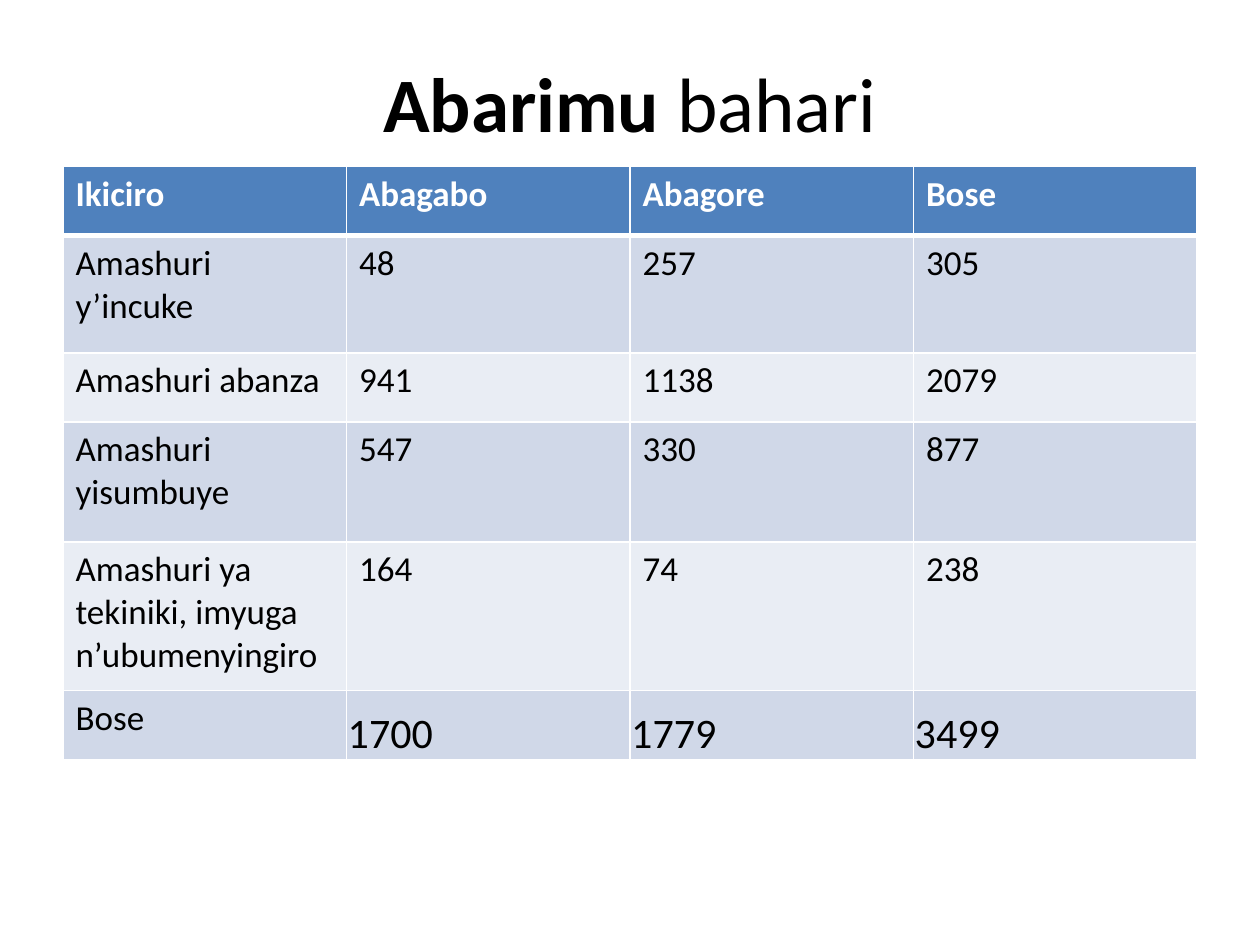
from lxml import etree
from pptx import Presentation
from pptx.dml.color import RGBColor
from pptx.enum.text import MSO_ANCHOR, PP_ALIGN
from pptx.oxml.ns import qn
from pptx.util import Inches, Pt

MIDDLE = MSO_ANCHOR.MIDDLE
BOTTOM = MSO_ANCHOR.BOTTOM
CENTER = PP_ALIGN.CENTER

FONT = "Calibri"
BLACK = "000000"
WHITE = "FFFFFF"
HEADER_FILL = "4F81BD"
BAND_FILLS = ["E9EDF4", "D0D8E8"]

COLUMN_WIDTH = 2.25
ROW_HEIGHTS = [0.55, 0.93, 0.55, 0.95, 1.18, 0.55]
TEACHERS = [
    ["Ikiciro", "Abagabo", "Abagore", "Bose"],
    ["Amashuri y’incuke", "48", "257", "305"],
    ["Amashuri abanza", "941", "1138", "2079"],
    ["Amashuri yisumbuye", "547", "330", "877"],
    ["Amashuri ya tekiniki, imyuga n’ubumenyingiro", "164", "74", "238"],
    ["Bose", "1700", "1779", "3499"],
]


def color(value):
    return RGBColor.from_string(value)


def style_font(font, size, value):
    font.name = FONT
    font.size = Pt(size)
    font.color.rgb = color(value)


def add_title(slide):
    shape = slide.shapes.add_textbox(Inches(0.5), Inches(0.3), Inches(9), Inches(1.02))
    frame = shape.text_frame
    frame.word_wrap = True
    frame.vertical_anchor = MIDDLE
    paragraph = frame.paragraphs[0]
    paragraph.alignment = CENTER
    style_font(paragraph.font, 44, BLACK)
    for text, bold in [("Abarimu ", True), ("bahari", False)]:
        run = paragraph.add_run()
        run.text = text
        run.font.bold = bold


def set_borders(cell, top, bottom):
    properties = cell._tc.get_or_add_tcPr()
    for side, width in [("L", 1), ("R", 1), ("T", top), ("B", bottom)]:
        line = etree.SubElement(properties, qn(f"a:ln{side}"), w=str(Pt(width)))
        fill = etree.SubElement(line, qn("a:solidFill"))
        etree.SubElement(fill, qn("a:srgbClr"), val=WHITE)


def fill_cell(cell, text, row, is_total):
    is_header = row == 0
    set_borders(cell, 3 if row == 1 else 1, 3 if is_header else 1)
    cell.fill.solid()
    cell.fill.fore_color.rgb = color(HEADER_FILL if is_header else BAND_FILLS[row % 2])
    cell.text = text
    font = cell.text_frame.paragraphs[0].font
    style_font(font, 24 if is_total else 20, WHITE if is_header else BLACK)
    font.bold = is_header
    if is_total:
        cell.vertical_anchor = BOTTOM
        cell.margin_left = cell.margin_right = cell.margin_top = Inches(0.01)
        cell.margin_bottom = 0


def add_teacher_table(slide):
    row_count, column_count = len(TEACHERS), len(TEACHERS[0])
    table = slide.shapes.add_table(
        row_count, column_count, Inches(0.5), Inches(1.32),
        Inches(COLUMN_WIDTH * column_count), Inches(sum(ROW_HEIGHTS)),
    ).table
    for column in table.columns:
        column.width = Inches(COLUMN_WIDTH)
    for row, values in enumerate(TEACHERS):
        table.rows[row].height = Inches(ROW_HEIGHTS[row])
        for column, text in enumerate(values):
            is_total = row == row_count - 1 and column > 0
            fill_cell(table.cell(row, column), text, row, is_total)


def main():
    presentation = Presentation()
    presentation.slide_width = Inches(10)
    presentation.slide_height = Inches(7.5)
    slide = presentation.slides.add_slide(presentation.slide_layouts[6])
    add_title(slide)
    add_teacher_table(slide)
    presentation.save("out.pptx")


if __name__ == "__main__":
    main()
